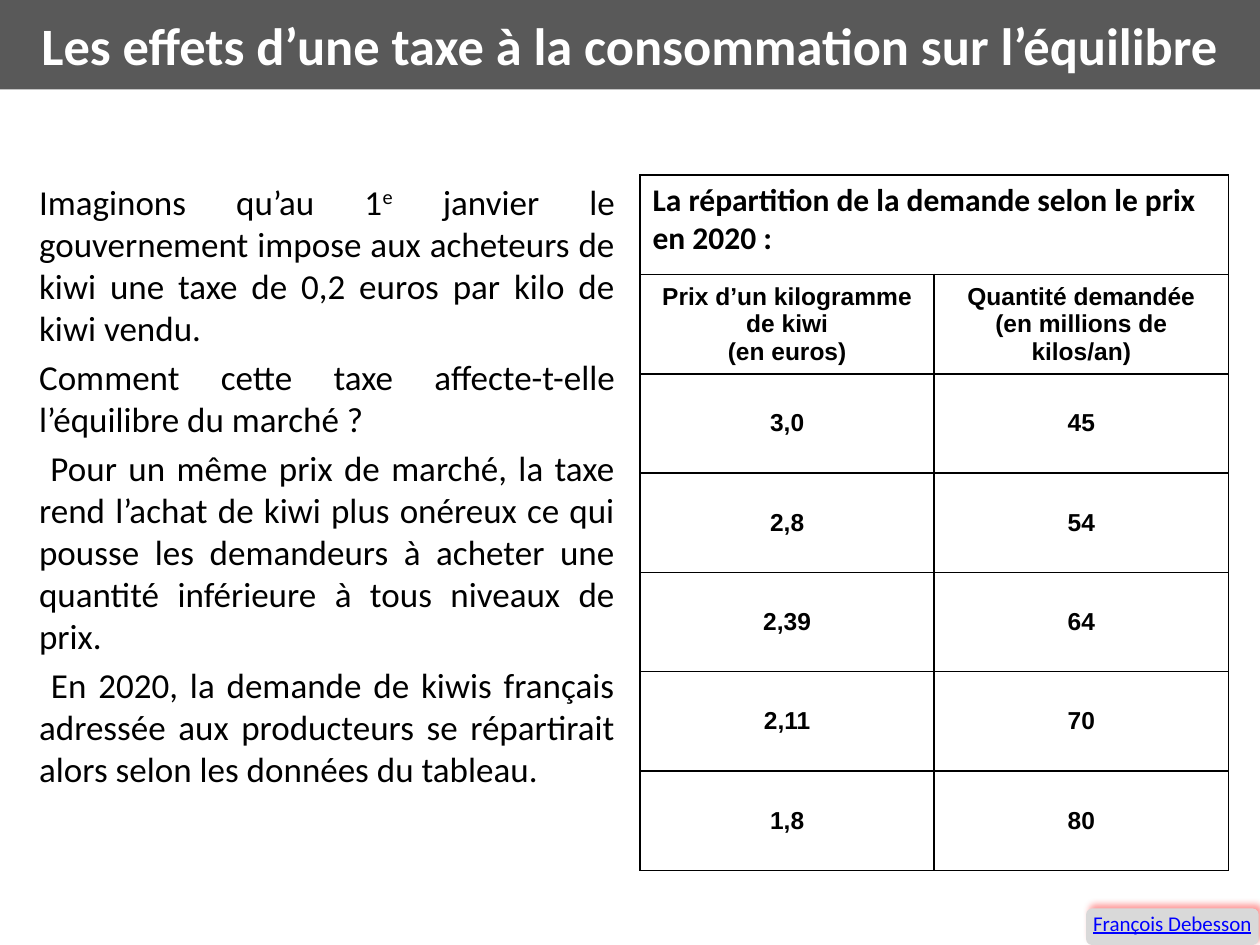
from dataclasses import dataclass

from lxml import etree
from pptx import Presentation
from pptx import util as u
from pptx.dml.color import RGBColor
from pptx.enum import shapes, text
from pptx.oxml import parse_xml
from pptx.oxml.ns import nsdecls, qn


@dataclass(frozen=True)
class Theme:
    heading_font: str = "Calibri"
    data_font: str = "Arial"
    ink: str = "000000"
    paper: str = "FFFFFF"
    banner: str = "595959"
    badge: str = "D9D9D9"
    glow: str = "FF0000"
    link: str = "0000FF"
    title_size: int = 30
    body_size: int = 20
    caption_size: int = 18
    data_size: int = 14
    badge_size: int = 12


THEME = Theme()
WIDTH, HEIGHT = u.Inches(10), u.Inches(7.5)
INSET = u.Inches(0.04)

TITLE = "Les effets d’une taxe à la consommation sur l’équilibre"
# Each paragraph is a list of (words, is superscript).
BODY = [
    [("Imaginons qu’au 1", False), ("e", True),
     (" janvier le gouvernement impose aux acheteurs de kiwi une taxe de "
      "0,2 euros par kilo de kiwi vendu.", False)],
    [("Comment cette taxe affecte-t-elle l’équilibre du marché ?", False)],
    [(" Pour un même prix de marché, la taxe rend l’achat de kiwi plus onéreux "
      "ce qui pousse les demandeurs à acheter une quantité inférieure à tous "
      "niveaux de prix.", False)],
    [(" En 2020, la demande de kiwis français adressée aux producteurs se "
      "répartirait alors selon les données du tableau.", False)],
]
CAPTION = "La répartition de la demande selon le prix en 2020 :"
DEMAND = [
    ("Prix d’un kilogramme de kiwi\n(en euros)",
     "Quantité demandée\n(en millions de kilos/an)"),
    ("3,0", "45"),
    ("2,8", "54"),
    ("2,39", "64"),
    ("2,11", "70"),
    ("1,8", "80"),
]
AUTHOR = "François Debesson"


def inches_box(left, top, width, height):
    return tuple(u.Inches(length) for length in (left, top, width, height))


def rgb(value):
    return RGBColor.from_string(value)


def fill(target, color):
    target.fill.solid()
    target.fill.fore_color.rgb = rgb(color)


def set_margins(target, horizontal, vertical):
    target.margin_left = target.margin_right = horizontal
    target.margin_top = target.margin_bottom = vertical


def style(paragraph, font, size, color, align, bold=False):
    paragraph.alignment = align
    paragraph.font.name = font
    paragraph.font.size = u.Pt(size)
    paragraph.font.color.rgb = rgb(color)
    paragraph.font.bold = bold


def add_title(slide, box):
    title = slide.shapes.title
    title.left, title.top, title.width, title.height = box
    fill(title, THEME.banner)
    frame = title.text_frame
    frame.text = TITLE
    frame.word_wrap = True
    frame.auto_size = text.MSO_AUTO_SIZE.NONE
    frame.vertical_anchor = text.MSO_ANCHOR.MIDDLE
    set_margins(frame, INSET, INSET)
    style(frame.paragraphs[0], THEME.heading_font, THEME.title_size,
          THEME.paper, text.PP_ALIGN.CENTER, bold=True)


def add_body(slide, box):
    frame = slide.shapes.add_textbox(*box).text_frame
    frame.word_wrap = True
    set_margins(frame, INSET, INSET)
    for index, pieces in enumerate(BODY):
        paragraph = frame.add_paragraph() if index else frame.paragraphs[0]
        style(paragraph, THEME.heading_font, THEME.body_size, THEME.ink,
              text.PP_ALIGN.JUSTIFY)
        paragraph.space_before = u.Pt(0.2 * THEME.body_size)
        for words, superscript in pieces:
            run = paragraph.add_run()
            run.text = words
            if superscript:
                run.font._element.set("baseline", "30000")


def add_borders(cell):
    properties = cell._tc.get_or_add_tcPr()
    for index, side in enumerate(("lnL", "lnR", "lnT", "lnB")):
        properties.insert(index, parse_xml(
            f'<a:{side} {nsdecls("a")} w="{u.Pt(1)}"><a:solidFill>'
            f'<a:srgbClr val="{THEME.ink}"/></a:solidFill></a:{side}>'))


def add_demand_table(slide, box):
    row_count, column_count = len(DEMAND) + 1, len(DEMAND[0])
    table = slide.shapes.add_table(row_count, column_count, *box).table
    table.first_row = table.horz_banding = False
    for row in table.rows:
        row.height = box[3] // row_count
    for cell in table.iter_cells():
        cell.fill.background()
        add_borders(cell)

    caption = table.cell(0, 0)
    caption.merge(table.cell(0, column_count - 1))
    caption.text = CAPTION
    style(caption.text_frame.paragraphs[0], THEME.heading_font,
          THEME.caption_size, THEME.ink, text.PP_ALIGN.LEFT, bold=True)

    for row_index, values in enumerate(DEMAND, start=1):
        for column_index, value in enumerate(values):
            cell = table.cell(row_index, column_index)
            cell.text = value
            cell.vertical_anchor = text.MSO_ANCHOR.MIDDLE
            set_margins(cell, u.Inches(0.07), 0)
            for paragraph in cell.text_frame.paragraphs:
                style(paragraph, THEME.data_font, THEME.data_size, THEME.ink,
                      text.PP_ALIGN.CENTER, bold=True)


def add_glow_shadow(shape):
    shape.shadow.inherit = False
    effects = shape._element.spPr.find(qn("a:effectLst"))
    shadow = etree.SubElement(
        effects, qn("a:outerShdw"), blurRad=str(u.Pt(4)), dist=str(u.Pt(3)),
        dir=str(315 * 60000), algn="bl", rotWithShape="0")
    color = etree.SubElement(shadow, qn("a:srgbClr"), val=THEME.glow)
    etree.SubElement(color, qn("a:alpha"), val="40000")


def add_author_badge(slide, box):
    badge = slide.shapes.add_shape(shapes.MSO_SHAPE.ROUNDED_RECTANGLE, *box)
    fill(badge, THEME.badge)
    badge.line.fill.background()
    add_glow_shadow(badge)
    frame = badge.text_frame
    frame.text = AUTHOR
    frame.vertical_anchor = text.MSO_ANCHOR.TOP
    set_margins(frame, 0, 0)
    paragraph = frame.paragraphs[0]
    style(paragraph, THEME.heading_font, THEME.badge_size, THEME.link,
          text.PP_ALIGN.CENTER)
    paragraph.font.underline = True


def main():
    presentation = Presentation()
    presentation.slide_width, presentation.slide_height = WIDTH, HEIGHT
    slide = presentation.slides.add_slide(presentation.slide_layouts[5])
    content_top = 1.39
    add_title(slide, (0, 0, WIDTH, u.Inches(0.71)))
    add_body(slide, inches_box(0.27, content_top, 4.65, 4.99))
    add_demand_table(slide, inches_box(5.08, content_top, 4.67, 5.52))
    add_author_badge(slide, inches_box(8.62, 7.21, 1.37, 0.29))
    presentation.save("out.pptx")


if __name__ == "__main__":
    main()
